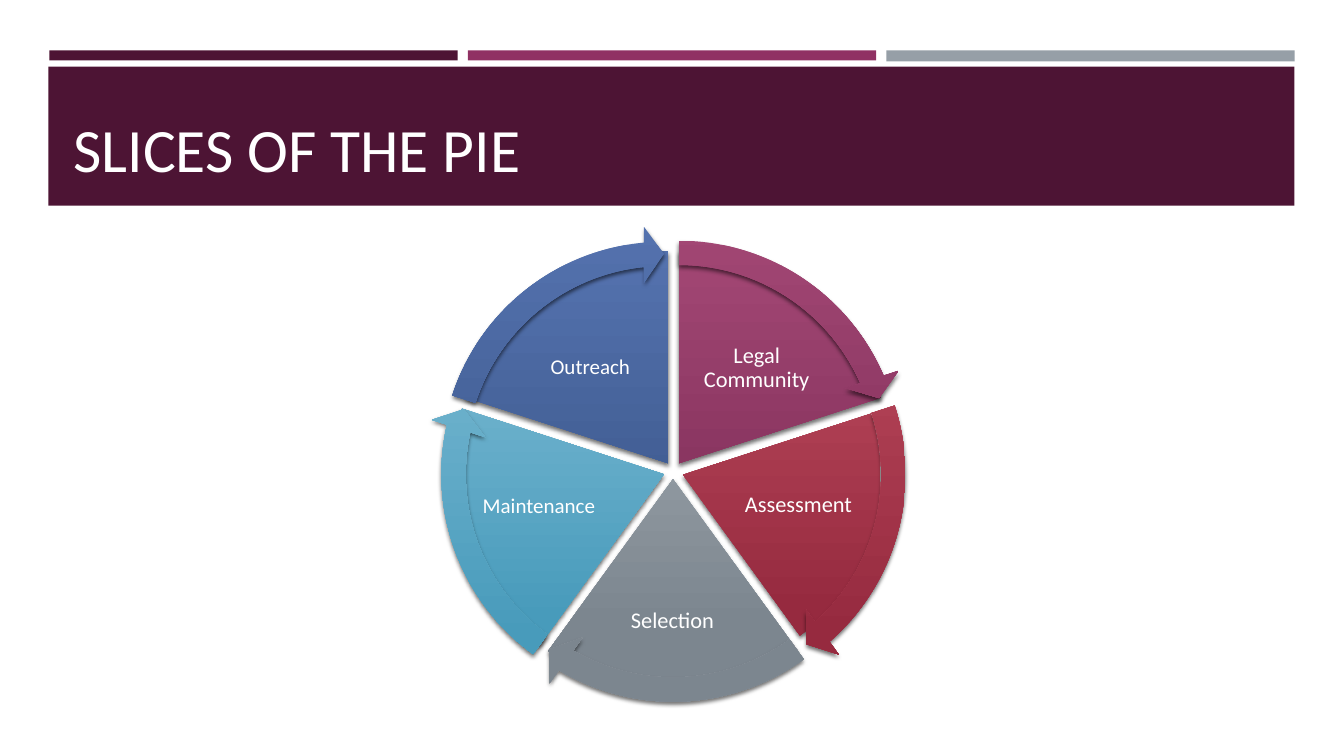
from lxml import etree
from pptx import Presentation
from pptx.dml.color import RGBColor
from pptx.enum.shapes import MSO_SHAPE
from pptx.enum.text import MSO_ANCHOR, PP_ALIGN
from pptx.oxml.ns import qn
from pptx.util import Inches, Pt

COLORS = {"plum": "4D1434", "magenta": "903163", "grey": "969FA7",
          "white": "FFFFFF", "shadow": "000000"}
FONT = "Calibri"

TITLE = "SLICES OF THE PIE"
TITLE_BOX = (0.63, 0.8, 12.06, 1.08)
BANDS = [
    ("plum", (0.49, 0.5, 4.05, 0.1)),
    ("grey", (8.79, 0.5, 4.05, 0.11)),
    ("magenta", (4.64, 0.5, 4.05, 0.1)),
    ("plum", (0.48, 0.66, 12.36, 1.38)),
]
# label, size, label box, slice centre, slice size, arrow centre, gradient
SLICES = [
    ("Legal Community", 16, (6.83, 3.2, 1.35, 0.9),
     (6.735, 4.595), (4.21, 4.21), (6.735, 4.595), ("A24774", "792953")),
    ("Assessment", 16, (7.34, 4.54, 1.16, 0.94),
     (6.775, 4.71), (3.91, 3.96), (6.775, 4.705), ("BF4E61", "962A3F")),
    ("Selection", 16, (6.07, 5.61, 1.2, 1.1),
     (6.675, 4.755), (4.21, 4.21), (6.675, 4.755), ("ABB2B8", "7C868F")),
    ("Maintenance", 15, (4.72, 4.53, 1.25, 1),
     (6.585, 4.705), (4.21, 4.21), (6.585, 4.705), ("84BFD7", "489BBB")),
    ("Outreach", 15, (5.18, 3.2, 1.35, 0.9),
     (6.625, 4.595), (4.21, 4.21), (6.585, 4.605), ("5472AE", "365284")),
]
# Angles are adjustment units: a full turn is 216, the top of the circle is 162.
TURN, TOP = 216, 162
ARROW_SIZE = (4.73, 4.73)
ARROW_WIDTH, ARROW_HEAD, ARROW_TIP = 0.051, 0.059, 3.275


def add_preset(slide, preset, box, adjustments=()):
    shape = slide.shapes.add_shape(preset, *map(Inches, box))
    shape.shadow.inherit = False
    shape.line.fill.background()
    for index, value in enumerate(adjustments):
        shape.adjustments[index] = value
    return shape


def style_slice(shape, gradient):
    """Give a slice or arrow its vertical gradient and soft shadow."""
    shape.fill.gradient()
    shape.fill.gradient_angle = 270
    for stop, color, position in zip(shape.fill.gradient_stops, gradient, (0, 0.84)):
        stop.color.rgb = RGBColor.from_string(color)
        stop.position = position
    effects = shape._element.spPr.find(qn("a:effectLst"))
    shadow = etree.SubElement(effects, qn("a:outerShdw"), blurRad=str(Pt(3)),
                              dist=str(Pt(2)), dir="5400000", rotWithShape="0")
    color = etree.SubElement(shadow, qn("a:srgbClr"), val=COLORS["shadow"])
    etree.SubElement(color, qn("a:alpha"), val="55000")


def add_text(slide, text, box, size, frame_format, paragraph_format):
    frame = slide.shapes.add_textbox(*map(Inches, box)).text_frame
    paragraph = frame.paragraphs[0]
    run = paragraph.add_run()
    run.text = text
    run.font.color.rgb = RGBColor.from_string(COLORS["white"])
    font_format = {"name": FONT, "size": Pt(size)}
    for target, values in ((frame, frame_format), (paragraph, paragraph_format),
                           (run.font, font_format)):
        for name, value in values.items():
            setattr(target, name, value)


def centred_box(centre, size):
    return (centre[0] - size[0] / 2, centre[1] - size[1] / 2, *size)


def slice_angles(index):
    step = TURN / len(SLICES)
    return (TOP + index * step) % TURN, (TOP + (index + 1) * step) % TURN


def main():
    deck = Presentation()
    deck.slide_width, deck.slide_height = Inches(13.33), Inches(7.5)
    slide = deck.slides.add_slide(deck.slide_layouts[6])

    for color, box in BANDS:
        band = add_preset(slide, MSO_SHAPE.RECTANGLE, box)
        band.fill.solid()
        band.fill.fore_color.rgb = RGBColor.from_string(COLORS[color])
    add_text(slide, TITLE, TITLE_BOX, 44,
             {"word_wrap": True, "vertical_anchor": MSO_ANCHOR.BOTTOM}, {})

    label_frame = {"word_wrap": True, "vertical_anchor": MSO_ANCHOR.MIDDLE}
    for side in ("left", "right", "top", "bottom"):
        label_frame[f"margin_{side}"] = Inches(0.02)
    label_paragraph = {"alignment": PP_ALIGN.CENTER, "line_spacing": 0.9}

    for index, (label, size, label_box, centre, extent, _, gradient) in enumerate(SLICES):
        pie = add_preset(slide, MSO_SHAPE.PIE, centred_box(centre, extent),
                         slice_angles(index))
        style_slice(pie, gradient)
        add_text(slide, label, label_box, size, label_frame, label_paragraph)

    for index, (*_, arrow_centre, gradient) in enumerate(SLICES):
        start, end = slice_angles(index)
        arrow = add_preset(slide, MSO_SHAPE.CIRCULAR_ARROW,
                           centred_box(arrow_centre, ARROW_SIZE),
                           (ARROW_WIDTH, ARROW_TIP, end - ARROW_TIP, start, ARROW_HEAD))
        style_slice(arrow, gradient)

    deck.save("out.pptx")


if __name__ == "__main__":
    main()
